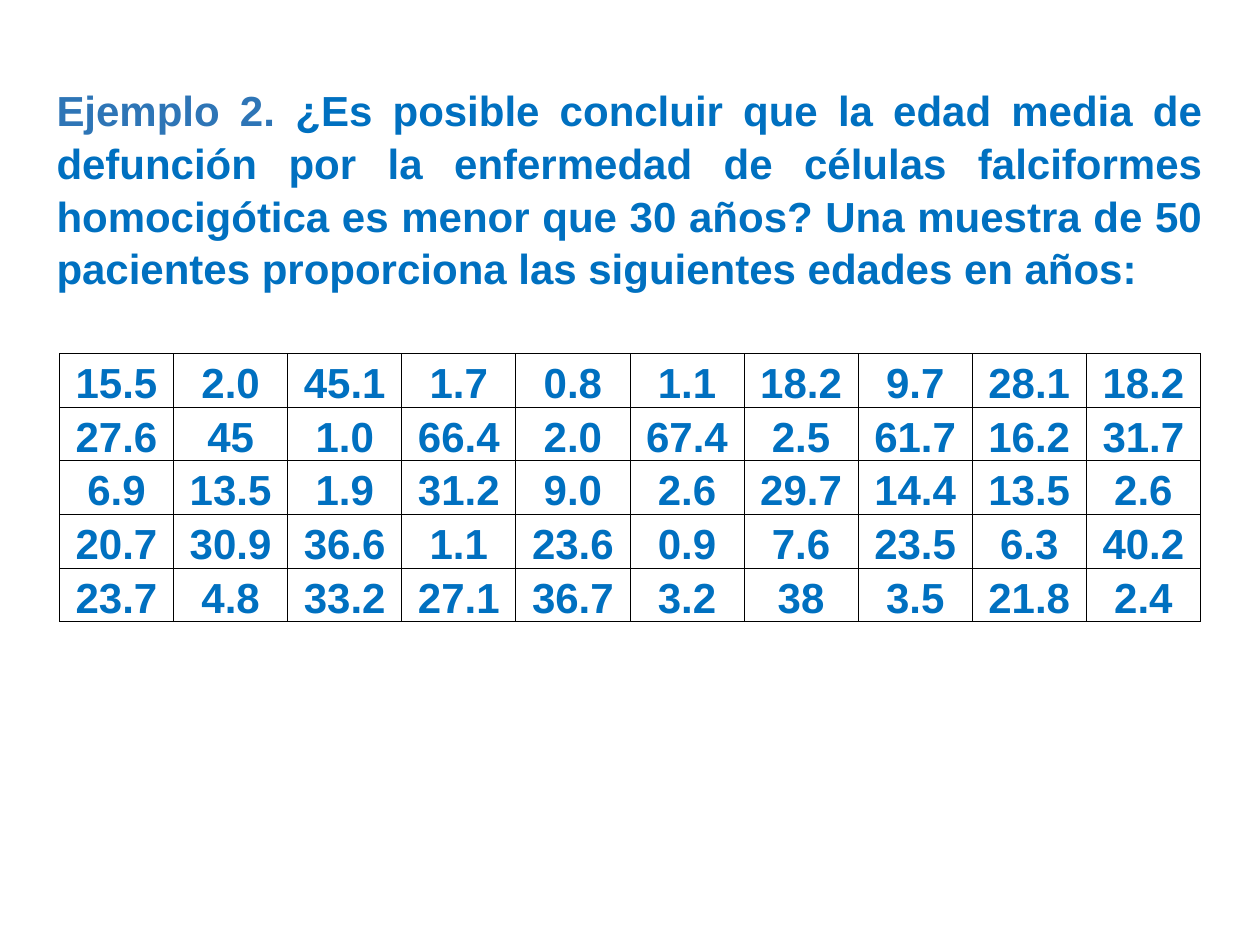
from lxml import etree
from pptx import Presentation
from pptx.dml.color import RGBColor
from pptx.enum.text import MSO_ANCHOR, MSO_AUTO_SIZE, PP_ALIGN
from pptx.oxml.ns import qn
from pptx.util import Pt

BLUE = RGBColor(0x00, 0x70, 0xC0)
STEEL = RGBColor(0x2E, 0x75, 0xB6)
BLACK = RGBColor(0x00, 0x00, 0x00)
JUSTIFY, CENTER = PP_ALIGN.JUSTIFY, PP_ALIGN.CENTER
BOTTOM = MSO_ANCHOR.BOTTOM
GROW = MSO_AUTO_SIZE.SHAPE_TO_FIT_TEXT

QUESTION = [
    ("Ejemplo 2. ", STEEL),
    ("¿Es posible concluir que la edad media de defunción por la enfermedad "
     "de células falciformes homocigótica es menor que 30 años? Una muestra "
     "de 50 pacientes proporciona las siguientes edades en años:", BLUE),
]
AGES = [row.split() for row in (
    "15.5 2.0 45.1 1.7 0.8 1.1 18.2 9.7 28.1 18.2",
    "27.6 45 1.0 66.4 2.0 67.4 2.5 61.7 16.2 31.7",
    "6.9 13.5 1.9 31.2 9.0 2.6 29.7 14.4 13.5 2.6",
    "20.7 30.9 36.6 1.1 23.6 0.9 7.6 23.5 6.3 40.2",
    "23.7 4.8 33.2 27.1 36.7 3.2 38 3.5 21.8 2.4",
)]


def add_run(p, text, color):
    r = p.add_run()
    r.text = text
    r.font.name = "Arial"
    r.font.size = Pt(24)
    r.font.bold = True
    r.font.color.rgb = color


def set_borders(cell, color, width):
    tcPr = cell._tc.get_or_add_tcPr()
    for i, side in enumerate(("a:lnL", "a:lnR", "a:lnT", "a:lnB")):
        ln = etree.Element(qn(side), w=str(Pt(width)))
        fill = etree.SubElement(ln, qn("a:solidFill"))
        etree.SubElement(fill, qn("a:srgbClr"), val=str(color))
        tcPr.insert(i, ln)  # borders come before the cell fill


def add_question(s, x, y, w, h):
    tf = s.shapes.add_textbox(Pt(x), Pt(y), Pt(w), Pt(h)).text_frame
    tf.word_wrap = True
    tf.auto_size = GROW
    p = tf.paragraphs[0]
    p.alignment = JUSTIFY
    p.line_spacing = 1.05
    for text, color in QUESTION:
        add_run(p, text, color)


def add_ages(s, x, y, w, h):
    n_rows, n_cols = len(AGES), len(AGES[0])
    table = s.shapes.add_table(n_rows, n_cols, Pt(x), Pt(y), Pt(w), Pt(h)).table
    table.first_row = table.horz_banding = False
    for col in table.columns:
        col.width = Pt(w / n_cols)
    for row, ages in zip(table.rows, AGES):
        row.height = Pt(h / n_rows)
        for cell, age in zip(row.cells, ages):
            cell.fill.background()
            set_borders(cell, BLACK, 0.5)
            cell.vertical_anchor = BOTTOM
            cell.margin_left = cell.margin_right = cell.margin_top = Pt(0.7)
            cell.margin_bottom = Pt(0)
            p = cell.text_frame.paragraphs[0]
            p.alignment = CENTER
            add_run(p, age, BLUE)


def main():
    prs = Presentation()
    prs.slide_width, prs.slide_height = Pt(720), Pt(540)
    s = prs.slides.add_slide(prs.slide_layouts[6])
    # Statement of the problem
    add_question(s, 25.2, 43.2, 669, 123.8)
    # Sample of ages at death
    add_ages(s, 34, 202, 652, 153.4)
    prs.save("out.pptx")


if __name__ == "__main__":
    main()
